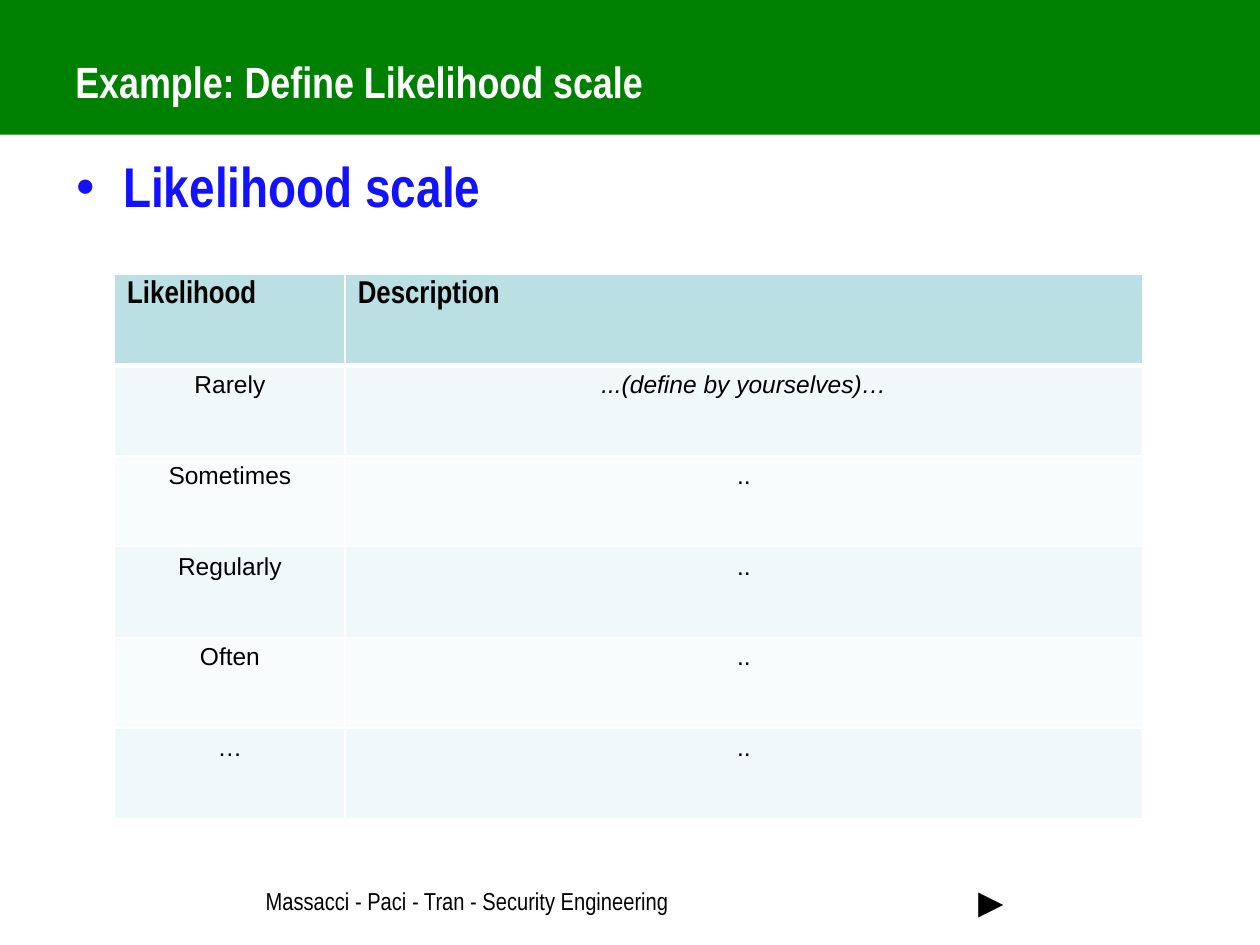
"""Build the likelihood scale slide with its header band, table and footer."""
from dataclasses import dataclass

import pptx
import pptx.dml.color
import pptx.enum.shapes
import pptx.enum.text
import pptx.oxml.ns
import pptx.util
from lxml import etree
from pptx.util import Inches


@dataclass(frozen=True)
class Theme:
    """Colours, fonts and type sizes of the slide."""
    band: str = "008000"
    white: str = "FFFFFF"
    black: str = "000000"
    accent: str = "1312FF"
    header_fill: str = "BBE0E3"
    row_fills: tuple = ("F1F8F9", "F8FCFC")
    heading_font: str = "Arial Narrow"
    cell_font: str = "Arial"
    title_size: int = 25
    bullet_size: int = 32
    header_size: int = 18
    small_size: int = 14
    arrow_size: int = 24


THEME = Theme()
ROWS = [
    ("Likelihood", "Description"),
    ("Rarely", "...(define by yourselves)…"),
    ("Sometimes", ".."),
    ("Regularly", ".."),
    ("Often", ".."),
    ("…", ".."),
]


def rgb(value):
    """Turn a hex string into a colour."""
    return pptx.dml.color.RGBColor.from_string(value)


def add_element(parent, tag, **attributes):
    """Append a DrawingML element to its parent."""
    return etree.SubElement(parent, pptx.oxml.ns.qn(tag), attributes)


def set_font(para, name, size, color, bold=False, italic=False):
    """Set the font of a whole paragraph."""
    font = para.font
    font.name, font.size = name, pptx.util.Pt(size)
    font.bold, font.italic = bold, italic
    font.color.rgb = rgb(color)


def add_band(page):
    """Draw the coloured band behind the title."""
    band = page.shapes.add_shape(
        pptx.enum.shapes.MSO_SHAPE.RECTANGLE,
        Inches(0), Inches(-0.03), Inches(10), Inches(1.1))
    band.shadow.inherit = False
    band.fill.solid()
    band.fill.fore_color.rgb = rgb(THEME.band)
    band.line.fill.background()


def add_text(page, text, place, size, color, bold=False, middle=False):
    """Add a one-paragraph text box and return the paragraph."""
    box = page.shapes.add_textbox(*map(Inches, place))
    frame = box.text_frame
    frame.word_wrap = True
    anchors = pptx.enum.text.MSO_ANCHOR
    frame.vertical_anchor = anchors.MIDDLE if middle else anchors.TOP
    para = frame.paragraphs[0]
    para.text = text
    set_font(para, THEME.heading_font, size, color, bold)
    return para


def add_bullet_text(page, text, place):
    """Add a text box whose paragraph has a hanging round bullet."""
    para = add_text(page, "", place, THEME.bullet_size, THEME.accent, True)
    para.text = text
    properties = para._p.get_or_add_pPr()
    indent = Inches(0.38)
    properties.set("marL", str(indent))
    properties.set("indent", str(-indent))
    bullet = etree.Element(pptx.oxml.ns.qn("a:bullet"))
    color = add_element(bullet, "a:buClr")
    add_element(color, "a:srgbClr", val=THEME.accent)
    add_element(bullet, "a:buSzPct", val="59000")
    add_element(bullet, "a:buFont", typeface=THEME.cell_font)
    add_element(bullet, "a:buChar", char="●")
    for position, element in enumerate(list(bullet)):
        properties.insert(position, element)


def set_borders(cell, bottom_width):
    """Give a cell white borders with the bottom width in points."""
    properties = cell._tc.get_or_add_tcPr()
    widths = {"a:lnL": 1, "a:lnR": 1, "a:lnT": 1, "a:lnB": bottom_width}
    for position, (tag, width) in enumerate(widths.items()):
        line = add_element(properties, tag, w=str(pptx.util.Pt(width)))
        fill = add_element(line, "a:solidFill")
        add_element(fill, "a:srgbClr", val=THEME.white)
        properties.insert(position, line)


def fill_cell(cell, text, row, italic):
    """Write and style one table cell."""
    header = row == 0
    cell.margin_left = cell.margin_right = Inches(0.1)
    cell.margin_top = cell.margin_bottom = Inches(0.05)
    cell.fill.solid()
    cell.fill.fore_color.rgb = rgb(
        THEME.header_fill if header else THEME.row_fills[(row - 1) % 2])
    para = cell.text_frame.paragraphs[0]
    para.text = text
    if header:
        set_font(para, THEME.heading_font, THEME.header_size, THEME.black, True)
    else:
        para.alignment = pptx.enum.text.PP_ALIGN.CENTER
        set_font(para, THEME.cell_font, THEME.small_size, THEME.black, italic=italic)
    set_borders(cell, 3 if header or row == 0 else 1)


def add_scale_table(page):
    """Add the table of likelihood levels and descriptions."""
    widths, height = (1.83, 6.33), 0.72
    table = page.shapes.add_table(
        len(ROWS), len(widths), Inches(0.91), Inches(2.18),
        Inches(sum(widths)), Inches(height * len(ROWS))).table
    for column, width in zip(table.columns, widths):
        column.width = Inches(width)
    for row, texts in enumerate(ROWS):
        table.rows[row].height = Inches(height)
        for column, text in enumerate(texts):
            fill_cell(table.cell(row, column), text, row, (row, column) == (1, 1))


def main():
    """Build and save the slide."""
    deck = pptx.Presentation()
    deck.slide_width, deck.slide_height = Inches(10), Inches(7.5)
    page = deck.slides.add_slide(deck.slide_layouts[6])
    add_band(page)
    add_text(page, "Example: Define Likelihood scale", (0.5, 0.3, 9, 0.69),
             THEME.title_size, THEME.white, bold=True, middle=True)
    add_bullet_text(page, "Likelihood scale", (0.5, 1.15, 9, 5.55))
    add_text(page, "Massacci - Paci - Tran - Security Engineering",
             (2.01, 6.98, 4.88, 0.34), THEME.small_size, THEME.black)
    add_text(page, "►", (7.6, 6.9, 2.08, 0.6), THEME.arrow_size, THEME.black)
    add_scale_table(page)
    deck.save("out.pptx")


if __name__ == "__main__":
    main()
